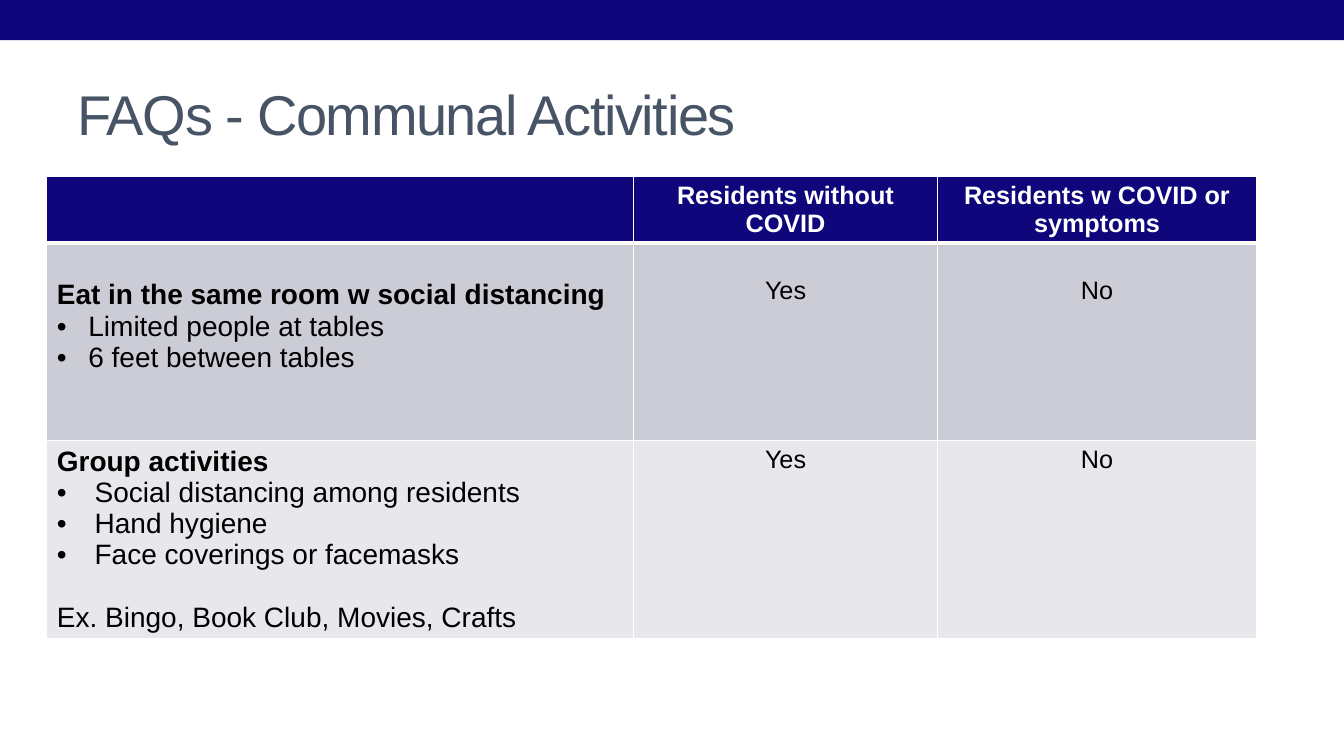
from pptx import Presentation
from pptx.dml.color import RGBColor
from pptx.enum.shapes import MSO_SHAPE
from pptx.enum.text import MSO_ANCHOR, PP_ALIGN
from pptx.oxml.ns import qn
from pptx.util import Pt
from lxml.etree import SubElement

HEX = {"navy": "0F067C", "slate": "465466", "white": "FFFFFF",
       "black": "000000", "dark": "CCCCD7", "light": "E7E7EC"}
TITLE = "FAQs - Communal Activities"
HEAD = [[], ["Residents without", "COVID"], ["Residents w COVID or symptoms"]]
EAT = [("head", "Eat in the same room w social distancing"),
       ("item", "Limited people at tables"),
       ("item", "6 feet between tables")]
GROUP = [("head", "Group activities"),
         ("item", "Social distancing among residents"),
         ("item", "Hand hygiene"),
         ("item", "Face coverings or facemasks"),
         ("note", "Ex. Bingo, Book Club, Movies, Crafts")]
BODY = [
    {"text": EAT, "votes": ["Yes", "No"], "fill": "dark",
     "tops": [26, 24, 24], "hang": 22.5},
    {"text": GROUP, "votes": ["Yes", "No"], "fill": "light",
     "tops": [3.6, 3.6, 3.6], "hang": 27},
]
COLS = [419, 217.5, 227.5]
ROWS = [47, 141, 141]
FONTS = {
    "title": {"size": Pt(40), "bold": False},
    "top": {"size": Pt(18), "bold": True},
    "vote": {"size": Pt(18), "bold": False},
    "head": {"size": Pt(20), "bold": True},
    "item": {"size": Pt(20), "bold": False},
    "note": {"size": Pt(20), "bold": False},
}


def color(name):
    return RGBColor.from_string(HEX[name])


def write(para, text, kind, ink):
    run = para.add_run()
    run.text = text
    for key, value in FONTS[kind].items():
        setattr(run.font, key, value)
    run.font.name = "Arial"
    run.font.color.rgb = color(ink)
    return run


def bullet(para, hang):
    props = para._p.get_or_add_pPr()
    props.set("marL", str(Pt(hang)))
    props.set("indent", str(-Pt(hang)))
    SubElement(props, qn("a:buFont")).set("typeface", "Arial")
    SubElement(props, qn("a:buChar")).set("char", "•")


def edge(cell, row):
    props = cell._tc.get_or_add_tcPr()
    for side in "LRTB":
        thick = (row, side) in [(0, "B"), (1, "T")]
        line = SubElement(props, qn("a:ln" + side), w=str(Pt(3 if thick else 1)))
        fill = SubElement(line, qn("a:solidFill"))
        SubElement(fill, qn("a:srgbClr"), val=HEX["white"])


def fill_cell(cell, row, lines, fill, ink, align, top=3.6, hang=0):
    edge(cell, row)
    cell.fill.solid()
    cell.fill.fore_color.rgb = color(fill)
    cell.margin_top = Pt(top)
    frame = cell.text_frame
    for n, (kind, text) in enumerate(lines):
        para = frame.add_paragraph() if n else frame.paragraphs[0]
        para.alignment = align
        if kind == "note":
            para.space_before = Pt(22.3)
        if kind == "item":
            bullet(para, hang)
        write(para, text, kind, ink)


deck = Presentation()
deck.slide_width, deck.slide_height = Pt(960), Pt(540)
slide = deck.slides.add_slide(deck.slide_layouts[5])

band = slide.shapes.add_shape(MSO_SHAPE.RECTANGLE, 0, 0, Pt(960), Pt(28.8))
band.shadow.inherit = False
band.fill.solid()
band.fill.fore_color.rgb = color("navy")
band.line.fill.background()

title = slide.shapes.title
place = {"left": 48, "top": 42, "width": 864, "height": 78}
for key, value in place.items():
    setattr(title, key, Pt(value))
title.text_frame.vertical_anchor = MSO_ANCHOR.MIDDLE
para = title.text_frame.paragraphs[0]
para.alignment = PP_ALIGN.LEFT
run = write(para, TITLE, "title", "slate")
run.font._element.set("spc", "-100")

table = slide.shapes.add_table(len(ROWS), len(COLS), Pt(33.4), Pt(126.2),
                               Pt(sum(COLS)), Pt(sum(ROWS))).table
for col, width in zip(table.columns, COLS):
    col.width = Pt(width)
for row, height in zip(table.rows, ROWS):
    row.height = Pt(height)

for c, lines in enumerate(HEAD):
    fill_cell(table.cell(0, c), 0, [("top", text) for text in lines],
              "navy", "white", PP_ALIGN.CENTER)
for r, data in enumerate(BODY, 1):
    cells = [data["text"]] + [[("vote", vote)] for vote in data["votes"]]
    for c, lines in enumerate(cells):
        align = PP_ALIGN.CENTER if c else PP_ALIGN.LEFT
        fill_cell(table.cell(r, c), r, lines, data["fill"], "black", align,
                  data["tops"][c], data["hang"])

deck.save("out.pptx")
